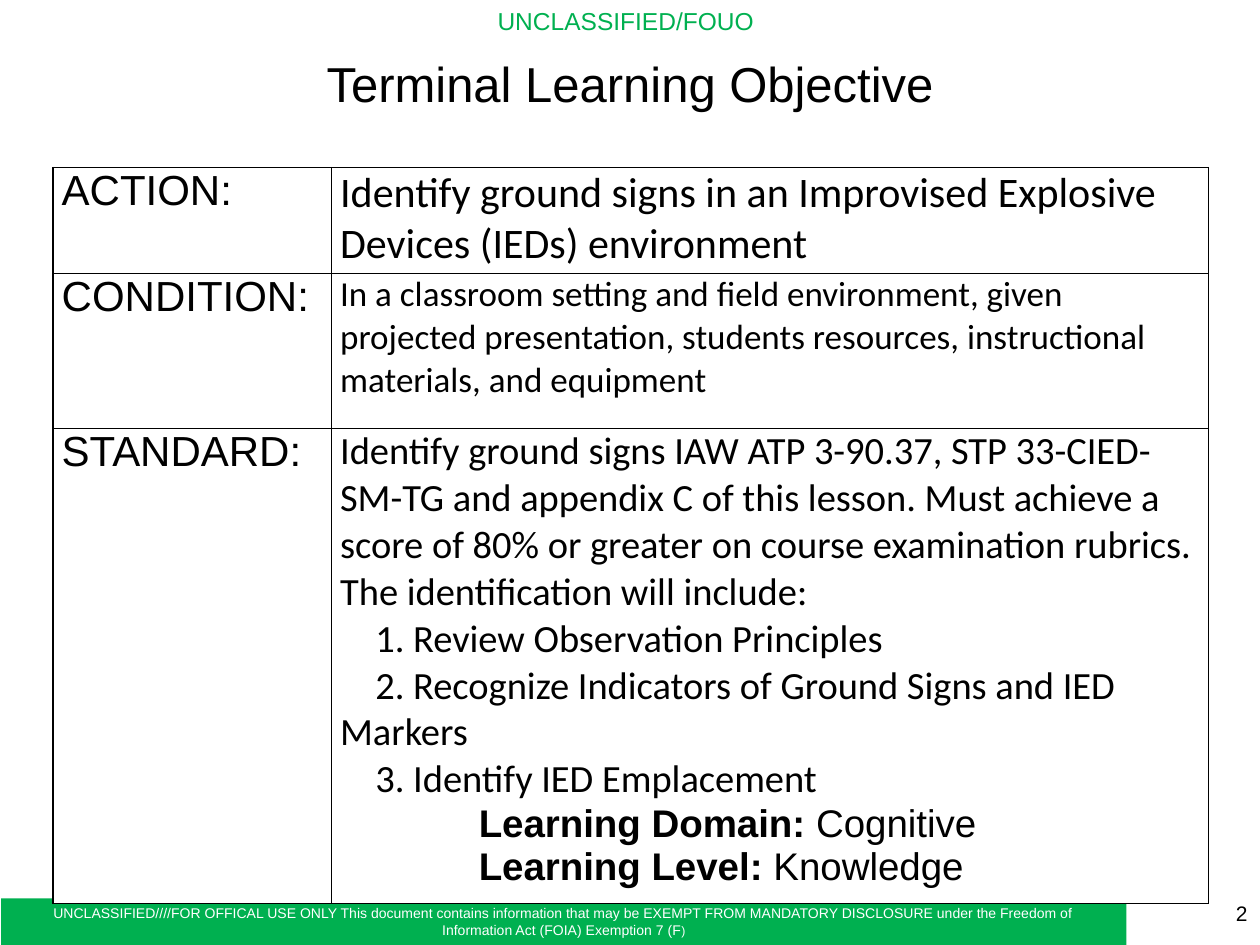
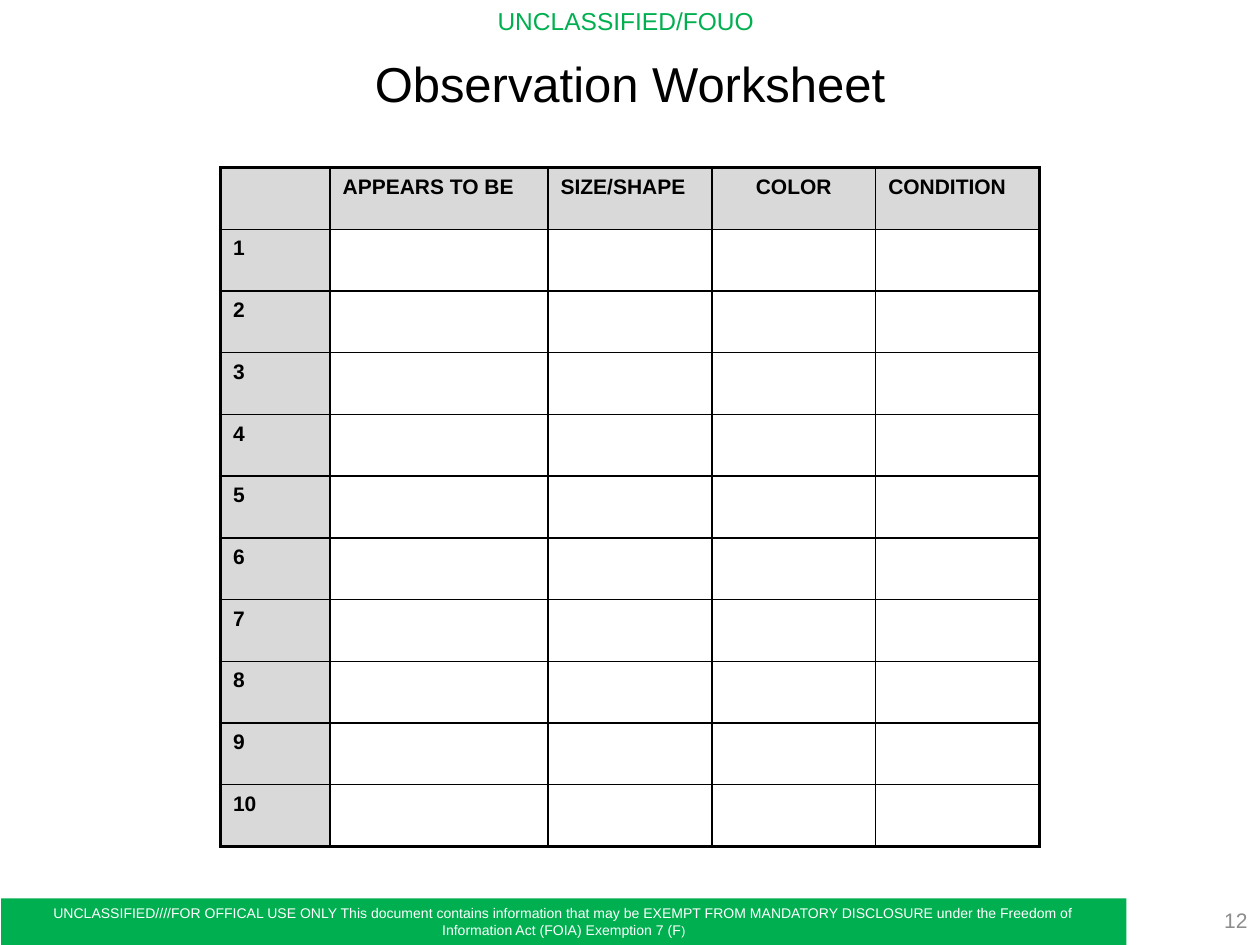
"""Builds a learning objective slide and an observation worksheet slide."""
import dataclasses

import lxml.etree
import pptx
import pptx.dml.color
import pptx.enum.shapes
import pptx.enum.text
import pptx.oxml.ns
import pptx.util

Inches = pptx.util.Inches
Pt = pptx.util.Pt
ALIGN = pptx.enum.text.PP_ALIGN
ANCHOR = pptx.enum.text.MSO_ANCHOR


@dataclasses.dataclass(frozen=True)
class Theme:
    heading_font: str = "Arial"
    body_font: str = "Calibri"
    black: str = "000000"
    white: str = "FFFFFF"
    green: str = "00B050"
    header_gray: str = "D9D9D9"
    number_gray: str = "8C8C8C"
    title: float = 28
    label: float = 24
    standard: float = 22
    condition: float = 20
    marking: float = 14
    small: float = 12
    footer: float = 8
    footer_end: float = 7
    thin: float = 1
    thick: float = 2.25


class Deck:
    def __init__(self, theme):
        self.theme = theme
        self.presentation = pptx.Presentation()
        self.presentation.slide_width = Inches(10)
        self.presentation.slide_height = Inches(7.5)
        self.slide = None

    def run(self, text, size, **format_values):
        values = {"name": self.theme.heading_font, "color": self.theme.black, "bold": False}
        return text, {**values, "size": Pt(size), **format_values}

    def add_paragraphs(self, frame, paragraphs, align=ALIGN.LEFT, indents=()):
        for index, runs in enumerate(paragraphs):
            paragraph = frame.paragraphs[0] if index == 0 else frame.add_paragraph()
            paragraph.alignment = align
            if index < len(indents):
                properties = paragraph._p.get_or_add_pPr()
                properties.set("marL", "0")
                properties.set("indent", str(Inches(indents[index])))
            for text, format_values in runs:
                run = paragraph.add_run()
                run.text = text
                for name, value in format_values.items():
                    if name == "color":
                        run.font.color.rgb = pptx.dml.color.RGBColor.from_string(value)
                    else:
                        setattr(run.font, name, value)

    def fill(self, target, color):
        target.fill.solid()
        target.fill.fore_color.rgb = pptx.dml.color.RGBColor.from_string(color)

    def text(self, box, run, align=ALIGN.LEFT, anchor=ANCHOR.TOP, wrap=True):
        shape = self.slide.shapes.add_textbox(*map(Inches, box))
        frame = shape.text_frame
        for name, value in {"word_wrap": wrap, "vertical_anchor": anchor}.items():
            setattr(frame, name, value)
        self.add_paragraphs(frame, [[run]], align)

    def band(self, box, runs):
        shape = self.slide.shapes.add_shape(
            pptx.enum.shapes.MSO_SHAPE.RECTANGLE, *map(Inches, box))
        shape.shadow.inherit = False
        self.fill(shape, self.theme.green)
        shape.line.fill.background()
        frame = shape.text_frame
        margins = {"margin_left": 0.2, "margin_right": 0.2}
        for name, value in margins.items():
            setattr(frame, name, Inches(value))
        frame.word_wrap = True
        self.add_paragraphs(frame, [runs], ALIGN.CENTER)

    def start_slide(self, title, number, number_box, number_color, number_anchor):
        theme = self.theme
        self.slide = self.presentation.slides.add_slide(self.presentation.slide_layouts[6])
        self.text((3.85, 0, 2.29, 0.34),
                  self.run("UNCLASSIFIED/FOUO", theme.marking, color=theme.green), wrap=False)
        notice = ("UNCLASSIFIED////FOR OFFICAL USE ONLY This document contains information "
                  "that may be EXEMPT FROM MANDATORY DISCLOSURE under the Freedom of "
                  "Information Act (FOIA) Exemption 7 (F")
        self.band((0.01, 7.13, 8.93, 0.37),
                  [self.run(notice, theme.footer, color=theme.white),
                   self.run(")", theme.footer_end, color=theme.white)])
        self.text((0.5, 0.3, 9, 0.72), self.run(title, theme.title),
                  ALIGN.CENTER, ANCHOR.MIDDLE)
        self.text(number_box, self.run(number, theme.small, color=number_color),
                  ALIGN.RIGHT, number_anchor)

    def table(self, left, top, columns, rows):
        box = (left, top, sum(columns), sum(rows))
        frame = self.slide.shapes.add_table(len(rows), len(columns), *map(Inches, box))
        table = frame.table
        for name in ("first_row", "horz_banding"):
            setattr(table, name, False)
        for column, width in zip(table.columns, columns):
            column.width = Inches(width)
        for row, height in zip(table.rows, rows):
            row.height = Inches(height)
        return table

    def cell(self, cell, margins, color, widths, paragraphs=(), align=ALIGN.LEFT, indents=()):
        horizontal, vertical = margins
        values = {"margin_left": horizontal, "margin_right": horizontal,
                  "margin_top": vertical, "margin_bottom": vertical}
        for name, value in values.items():
            setattr(cell, name, Inches(value))
        properties = cell._tc.get_or_add_tcPr()
        qualified = pptx.oxml.ns.qn
        for side, width in zip("LRTB", widths):
            line = lxml.etree.SubElement(properties, qualified(f"a:ln{side}"), w=str(Pt(width)))
            solid = lxml.etree.SubElement(line, qualified("a:solidFill"))
            lxml.etree.SubElement(solid, qualified("a:srgbClr"), val=self.theme.black)
        self.fill(cell, color)
        self.add_paragraphs(cell.text_frame, paragraphs, align, indents)


def add_objective(deck):
    theme = deck.theme
    deck.start_slide("Terminal Learning Objective", "2", (9.5, 7.1, 0.5, 0.4),
                     theme.black, ANCHOR.TOP)

    def body(text, size):
        return [deck.run(text, size, name=theme.body_font)]

    def learning(label, value):
        return [deck.run(label, theme.standard, bold=True), deck.run(value, theme.standard)]

    action = [body("Identify ground signs in an Improvised Explosive Devices (IEDs) "
                   "environment", theme.label)]
    condition = [body("In a classroom setting and field environment, given projected "
                      "presentation, students resources, instructional materials, "
                      "and equipment", theme.condition)]
    standard_texts = [
        "Identify ground signs IAW ATP 3-90.37, STP 33-CIED-SM-TG and appendix C of this "
        "lesson. Must achieve a score of 80% or greater on course examination rubrics. "
        "The identification will include:",
        "1. Review Observation Principles",
        "2. Recognize Indicators of Ground Signs and IED Markers",
        "3. Identify IED Emplacement",
    ]
    standard = [body(text, theme.standard) for text in standard_texts]
    standard += [learning("Learning Domain: ", "Cognitive"),
                 learning("Learning Level: ", "Knowledge")]
    objectives = [("ACTION:", action, ()), ("CONDITION:", condition, ()),
                  ("STANDARD:", standard, (0, 0.28, 0.28, 0.28, 1.1, 1.1))]

    table = deck.table(0.42, 1.33, (2.21, 6.96), (0.84, 1.23, 3.77))
    style = ((0.07, 0), theme.white, (theme.thin,) * 4)
    for row, (label, paragraphs, indents) in enumerate(objectives):
        deck.cell(table.cell(row, 0), *style, [[deck.run(label, theme.label)]])
        deck.cell(table.cell(row, 1), *style, paragraphs, indents=indents)


def add_worksheet(deck):
    theme = deck.theme
    deck.start_slide("Observation Worksheet", "12", (9.1, 7.1, 0.9, 0.4),
                     theme.number_gray, ANCHOR.MIDDLE)
    headers = ("", "APPEARS TO BE", "SIZE/SHAPE", "COLOR", "CONDITION")
    columns = (0.87, 1.73, 1.3, 1.3, 1.3)
    rows = (0.49,) * 11
    table = deck.table(1.75, 1.33, columns, rows)
    last_row, last_column = len(rows) - 1, len(columns) - 1
    for row in range(len(rows)):
        for column, header in enumerate(headers):
            text = header if row == 0 else str(row) if column == 0 else ""
            outer = (column == 0, column == last_column, row == 0, row == last_row)
            widths = [theme.thick if edge else theme.thin for edge in outer]
            color = theme.header_gray if row == 0 or column == 0 else theme.white
            paragraphs = [[deck.run(text, theme.small, bold=True)]] if text else ()
            align = ALIGN.CENTER if text == "COLOR" else ALIGN.LEFT
            deck.cell(table.cell(row, column), (0.1, 0.06), color, widths, paragraphs, align)


def main():
    deck = Deck(Theme())
    add_objective(deck)
    add_worksheet(deck)
    deck.presentation.save("out.pptx")


if __name__ == "__main__":
    main()
